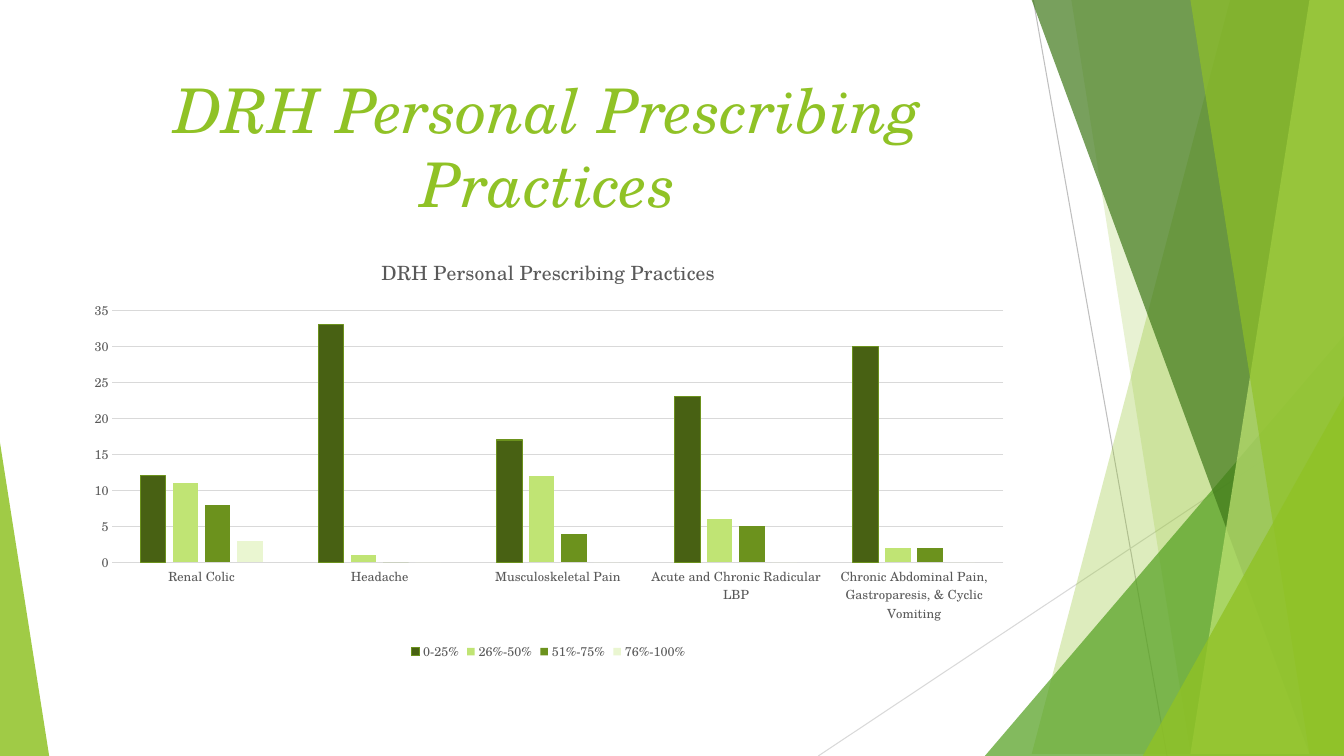
from lxml.etree import SubElement
from pptx import Presentation
from pptx.chart.data import CategoryChartData
from pptx.dml.color import RGBColor
from pptx.enum.chart import XL_CHART_TYPE, XL_LEGEND_POSITION, XL_TICK_MARK
from pptx.enum.shapes import MSO_CONNECTOR, MSO_SHAPE
from pptx.enum.text import MSO_ANCHOR, PP_ALIGN
from pptx.oxml.ns import qn
from pptx.util import Cm, Pt

FONT = "TeX Gyre Schola"
LIME = RGBColor(0x90, 0xC2, 0x26)
GREEN = RGBColor(0x54, 0xA0, 0x21)
FOREST = RGBColor(0x3F, 0x78, 0x19)
PALE_LIME = RGBColor(0xC0, 0xE4, 0x74)
DARK_OLIVE = RGBColor(0x48, 0x61, 0x13)
OLIVE = RGBColor(0x6C, 0x92, 0x1D)
MIST = RGBColor(0xEA, 0xF6, 0xD1)
GREY = RGBColor(0xBF, 0xBF, 0xBF)
LIGHT_GREY = RGBColor(0xD9, 0xD9, 0xD9)
TEXT_GREY = RGBColor(0x59, 0x59, 0x59)
WIDTH, HEIGHT = 33.87, 19.05


def paint(shape, color, opacity):
    shape.shadow.inherit = False
    shape.line.fill.background()
    shape.fill.solid()
    shape.fill.fore_color.rgb = color
    tint = shape.fill._xPr.find(qn("a:solidFill"))[0]
    SubElement(tint, qn("a:alpha"), val=str(opacity * 1000))


def style_font(font, size, color):
    font.name = FONT
    font.size = Pt(size)
    font.color.rgb = color
    font.bold = False


deck = Presentation()
deck.slide_width, deck.slide_height = Cm(WIDTH), Cm(HEIGHT)
page = deck.slides.add_slide(deck.slide_layouts[6])

for x1, y1, x2, y2, color in [
    (26.04, 0, 29.41, HEIGHT, GREY),
    (WIDTH, 10.24, 20.62, HEIGHT, LIGHT_GREY),
]:
    line = page.shapes.add_connector(MSO_CONNECTOR.STRAIGHT, Cm(x1), Cm(y1), Cm(x2), Cm(y2))
    line.line.color.rgb = color
    line.line.width = Pt(0.75)
    SubElement(line._element.spPr, qn("a:effectLst"))

facets = [
    ("band", (31.19, 25.5), LIME, 30),
    ("band", (26.67, 30.05), LIME, 20),
    ("triangle", (24.82, 8.46, 9.05, 1), GREEN, 72),
    ("band", (25.93, 32.79), FOREST, 70),
    ("band", (33.1, 30.28), PALE_LIME, 70),
    ("band", (30.38, 33.48), LIME, 65),
    ("triangle", (28.8, 9.98, 5.07, 1), LIME, 80),
    ("triangle", (0, 11.15, 1.24, 0), LIME, 85),
]
for kind, place, color, opacity in facets:
    if kind == "band":
        top_x, bottom_x = place
        outline = page.shapes.build_freeform(top_x, 0, scale=Cm(1))
        outline.add_line_segments([(WIDTH, 0), (WIDTH, HEIGHT), (bottom_x, HEIGHT)])
        facet = outline.convert_to_shape()
    else:
        left, top, width, peak = place
        facet = page.shapes.add_shape(
            MSO_SHAPE.ISOSCELES_TRIANGLE, Cm(left), Cm(top), Cm(width), Cm(HEIGHT - top))
        facet.adjustments[0] = peak
    paint(facet, color, opacity)

box = page.shapes.add_textbox(Cm(1.88), Cm(1.7), Cm(23.88), Cm(3.66))
box.text_frame.word_wrap = True
box.text_frame.vertical_anchor = MSO_ANCHOR.TOP
para = box.text_frame.paragraphs[0]
para.alignment = PP_ALIGN.CENTER
span = para.add_run()
span.text = "DRH Personal Prescribing Practices"
style_font(span.font, 44, LIME)
span.font.italic = True

data = CategoryChartData()
data.categories = [
    "Renal Colic",
    "Headache",
    "Musculoskeletal Pain",
    "Acute and Chronic Radicular LBP",
    "Chronic Abdominal Pain, Gastroparesis, & Cyclic Vomiting",
]
data.add_series("0-25%", (12, 33, 17, 23, 30))
data.add_series("26%-50%", (11, 1, 12, 6, 2))
data.add_series("51%-75%", (8, 0, 4, 5, 2))
data.add_series("76%-100%", (3, 0, 0, 0, 0))
chart = page.shapes.add_chart(
    XL_CHART_TYPE.COLUMN_CLUSTERED, Cm(1.88), Cm(5.99), Cm(23.88), Cm(10.77), data).chart
chart.font.name = FONT
chart.font.size = Pt(10)

chart.has_title = True
span = chart.chart_title.text_frame.paragraphs[0].add_run()
span.text = "DRH Personal Prescribing Practices"
style_font(span.font, 14, TEXT_GREY)

chart.has_legend = True
chart.legend.position = XL_LEGEND_POSITION.BOTTOM
chart.legend.include_in_layout = False
style_font(chart.legend.font, 9, TEXT_GREY)

for axis in (chart.category_axis, chart.value_axis):
    axis.major_tick_mark = axis.minor_tick_mark = XL_TICK_MARK.NONE
    style_font(axis.tick_labels.font, 9, TEXT_GREY)
chart.value_axis.minimum_scale = 0
chart.value_axis.maximum_scale = 35
chart.value_axis.major_unit = 5
chart.value_axis.format.line.fill.background()
for rule in (chart.category_axis.format.line, chart.value_axis.major_gridlines.format.line):
    rule.color.rgb = LIGHT_GREY
    rule.width = Pt(0.75)

plot = chart.plots[0]
plot.vary_by_categories = False
plot.gap_width = 219
plot.overlap = -27
for series, color in zip(plot.series, (DARK_OLIVE, PALE_LIME, OLIVE, MIST)):
    series.format.fill.solid()
    series.format.fill.fore_color.rgb = color
edge = plot.series[0].format.line
edge.color.rgb = OLIVE
edge.width = Pt(0.75)

area = chart._chartSpace.chart.plotArea
layout = area.find(qn("c:layout"))
if layout is None:
    layout = SubElement(area, qn("c:layout"))
    area.insert(0, layout)
manual = SubElement(layout, qn("c:manualLayout"))
for tag, value in [
    ("layoutTarget", "inner"), ("xMode", "edge"), ("yMode", "edge"),
    ("x", "0.04"), ("y", "0.17"), ("w", "0.94"), ("h", "0.59"),
]:
    SubElement(manual, qn(f"c:{tag}"), val=value)

deck.save("out.pptx")
